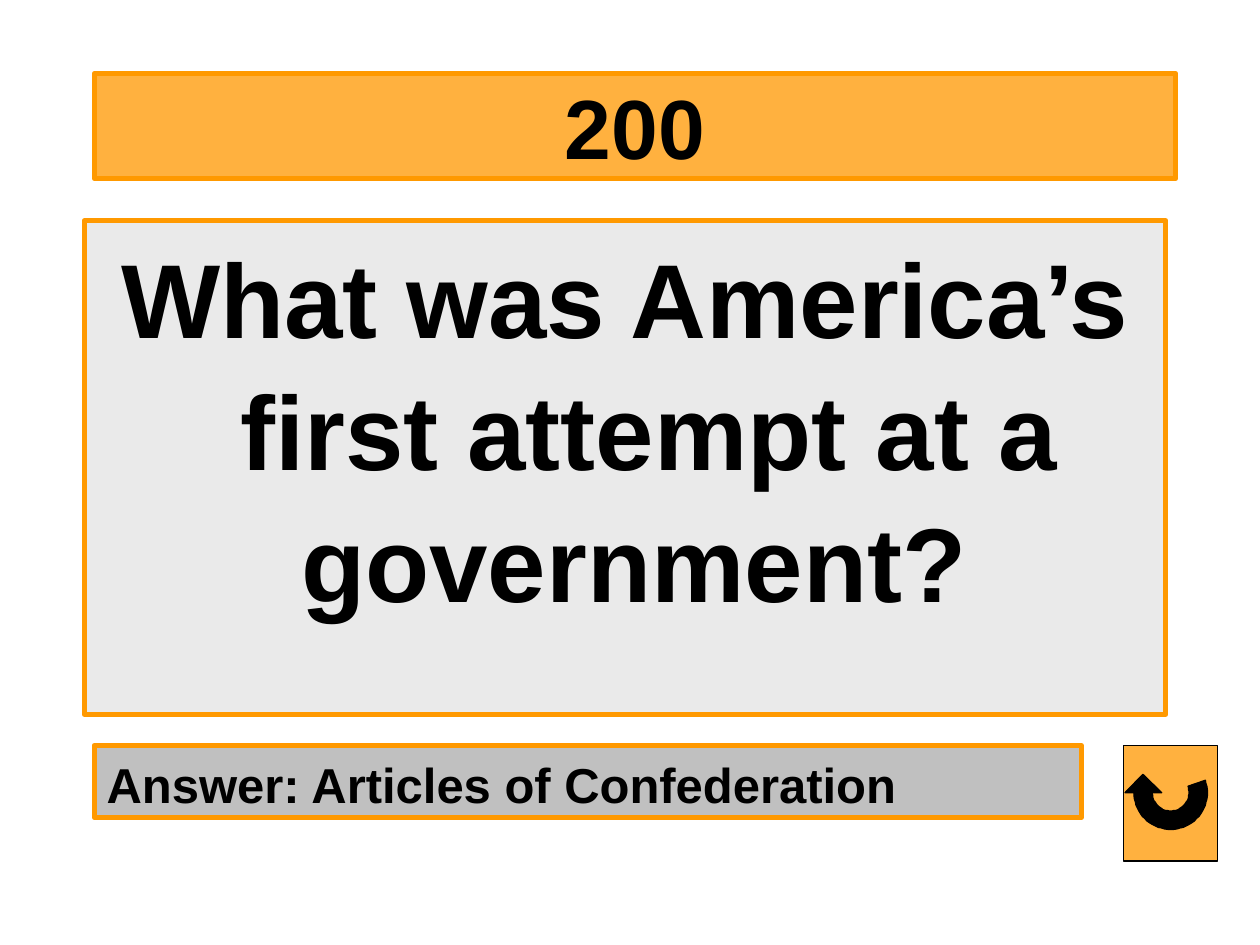
from math import cos, radians, sin

from pptx import Presentation
from pptx.dml.color import RGBColor
from pptx.enum.shapes import MSO_SHAPE
from pptx.enum.text import MSO_ANCHOR, MSO_AUTO_SIZE, PP_ALIGN
from pptx.oxml.ns import qn
from pptx.util import Cm, Pt

RECT = MSO_SHAPE.RECTANGLE
TOP, MIDDLE = MSO_ANCHOR.TOP, MSO_ANCHOR.MIDDLE
LEFT, CENTER = PP_ALIGN.LEFT, PP_ALIGN.CENTER
FIXED = MSO_AUTO_SIZE.NONE

COLORS = {
    "edge": "FF9900",
    "title": "FFB13F",
    "body": "EAEAEA",
    "answer": "C0C0C0",
    "ink": "000000",
}


def color(name):
    return RGBColor.from_string(COLORS[name])


def place(shape, left, top, width, height):
    shape.left, shape.top = Cm(left), Cm(top)
    shape.width, shape.height = Cm(width), Cm(height)


def paint(shape, fill, edge, weight):
    shape.fill.solid()
    shape.fill.fore_color.rgb = color(fill)
    shape.line.color.rgb = color(edge)
    shape.line.width = Pt(weight)


def write(shape, text, size, align, anchor, spacing=1.0):
    frame = shape.text_frame
    frame.word_wrap = True
    frame.auto_size = FIXED
    frame.vertical_anchor = anchor
    frame.text = text
    para = frame.paragraphs[0]
    para.alignment = align
    para.line_spacing = spacing
    font = para.runs[0].font
    font.name, font.size, font.bold = "Arial", Pt(size), True
    font.color.rgb = color("ink")
    return para


def hang(para, indent):
    props = para._p.get_or_add_pPr()
    props.set("marL", str(Cm(indent)))
    props.set("indent", str(-Cm(indent)))
    props.append(props.makeelement(qn("a:buNone"), {}))


def arc(x, y, radius, angles):
    return [(x + radius * cos(radians(a)), y + radius * sin(radians(a)))
            for a in angles]


def add_arrow(group, x, y, outer, inner):
    sweep = range(-20, 181, 5)
    tip = (outer + inner) / 2
    points = arc(x, y, inner, reversed(sweep)) + arc(x, y, outer, sweep)
    points += [(x - tip - inner, y), (x - tip, y - inner), (x - tip + inner, y)]
    dots = [(round(a * 100), round(b * 100)) for a, b in points]
    pen = group.shapes.build_freeform(*dots[0], scale=Cm(0.01))
    pen.add_line_segments(dots[1:], close=True)
    arrow = pen.convert_to_shape()
    arrow.shadow.inherit = False
    paint(arrow, "ink", "ink", 0.75)


def add_box(shapes, box, fill, edge, weight):
    shape = shapes.add_shape(RECT, *map(Cm, box))
    shape.shadow.inherit = False
    paint(shape, fill, edge, weight)
    return shape


def main():
    deck = Presentation()
    deck.slide_width, deck.slide_height = Cm(25.4), Cm(19.05)
    slide = deck.slides.add_slide(deck.slide_layouts[1])

    body = slide.placeholders[1]
    place(body, 1.7, 4.45, 21.8, 9.95)
    paint(body, "body", "edge", 3)
    text = "What was America’s first attempt at a government? "
    para = write(body, text, 60, CENTER, TOP, 1.05)
    hang(para, 0.95)

    title = slide.shapes.title
    place(title, 1.9, 1.48, 21.8, 2.12)
    paint(title, "title", "edge", 3)
    write(title, "200", 48, CENTER, MIDDLE)

    answer = add_box(slide.shapes, (1.9, 15.03, 19.9, 1.45), "answer", "edge", 3)
    write(answer, "Answer: Articles of Confederation", 28, LEFT, TOP, 1.05)

    button = slide.shapes.add_group_shape()
    add_box(button.shapes, (22.65, 15.03, 1.9, 2.33), "title", "ink", 0.75)
    add_arrow(button, 23.6, 15.98, 0.74, 0.37)

    deck.save("out.pptx")


if __name__ == "__main__":
    main()
